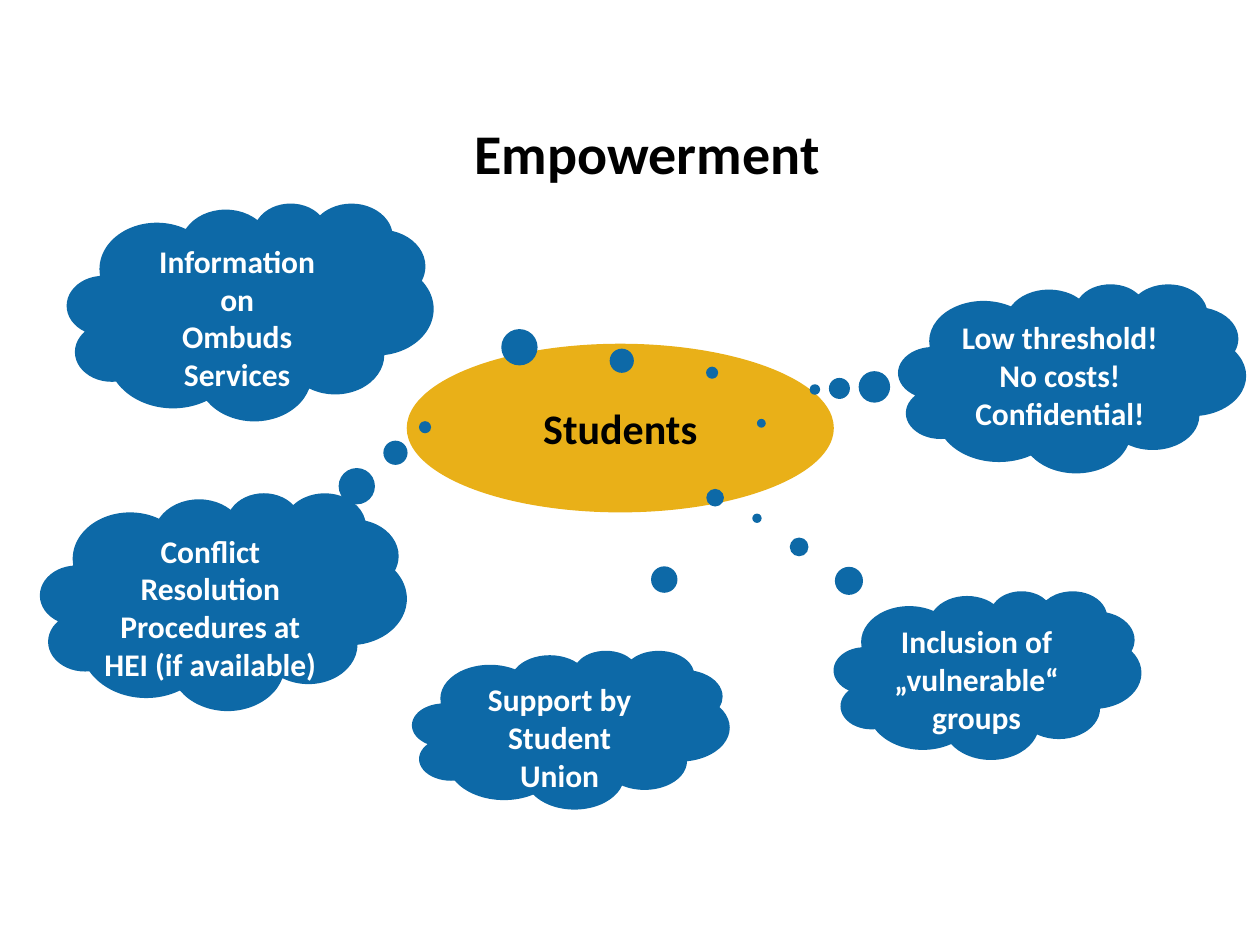
"""Build the Empowerment slide: students surrounded by thought clouds."""
from pptx import Presentation
from pptx.dml.color import RGBColor
from pptx.enum.shapes import MSO_SHAPE
from pptx.enum.text import MSO_ANCHOR, PP_ALIGN
from pptx.util import Cm, Pt


def set_text(sp, lines, size, color, anchor, wrap=True):
    tf = sp.text_frame
    tf.word_wrap = wrap
    tf.vertical_anchor = anchor
    fmt = {"name": "Calibri", "size": Pt(size), "bold": True}
    for i, line in enumerate(lines):
        p = tf.add_paragraph() if i else tf.paragraphs[0]
        p.alignment = PP_ALIGN.CENTER
        r = p.add_run()
        r.text = line
        for key, value in fmt.items():
            setattr(r.font, key, value)
        r.font.color.rgb = RGBColor.from_string(color)


def add_filled(kind, box, color):
    sp = s.shapes.add_shape(kind, *map(Cm, box))
    sp.shadow.inherit = False
    sp.fill.solid()
    sp.fill.fore_color.rgb = RGBColor.from_string(color)
    sp.line.fill.background()
    return sp


prs = Presentation()
prs.slide_width, prs.slide_height = Cm(25.4), Cm(19.05)
s = prs.slides.add_slide(prs.slide_layouts[5])

title = s.shapes.title
title_box = {"left": 2.51, "top": 1.8, "width": 21.59, "height": 2.54}
for key, value in title_box.items():
    setattr(title, key, Cm(value))
set_text(title, ["Empowerment"], 32, "000000", MSO_ANCHOR.MIDDLE)
title.text_frame.margin_right = Cm(0.77)

students = add_filled(MSO_SHAPE.OVAL, (8.2, 6.93, 8.61, 3.4), "E9B018")
set_text(students, ["Students"], 24, "000000", MSO_ANCHOR.MIDDLE, wrap=False)

clouds = [
    ((18.11, 5.72, 7.01, 3.81), (-0.74, 0.06),
     ["Low threshold!", "No costs!", "Confidential!"]),
    ((16.81, 11.91, 6.2, 3.4), (-0.75, -0.93),
     ["Inclusion of", "„vulnerable“ groups"]),
    ((0.81, 9.93, 7.39, 4.39), (0.55, -0.8),
     ["Conflict Resolution Procedures at HEI (if available)"]),
    ((1.35, 4.09, 7.39, 4.39), (1.26, 0.28),
     ["Information", "on", "Ombuds Services"]),
    ((8.31, 13.11, 6.4, 3.2), (0.6, -1.93),
     ["Support by Student Union"]),
]
for box, tail, lines in clouds:
    cloud = add_filled(MSO_SHAPE.CLOUD_CALLOUT, box, "0D69A7")
    for i, value in enumerate(tail):
        cloud.adjustments[i] = value
    set_text(cloud, lines, 18, "FFFFFF", MSO_ANCHOR.TOP)

prs.save("out.pptx")
